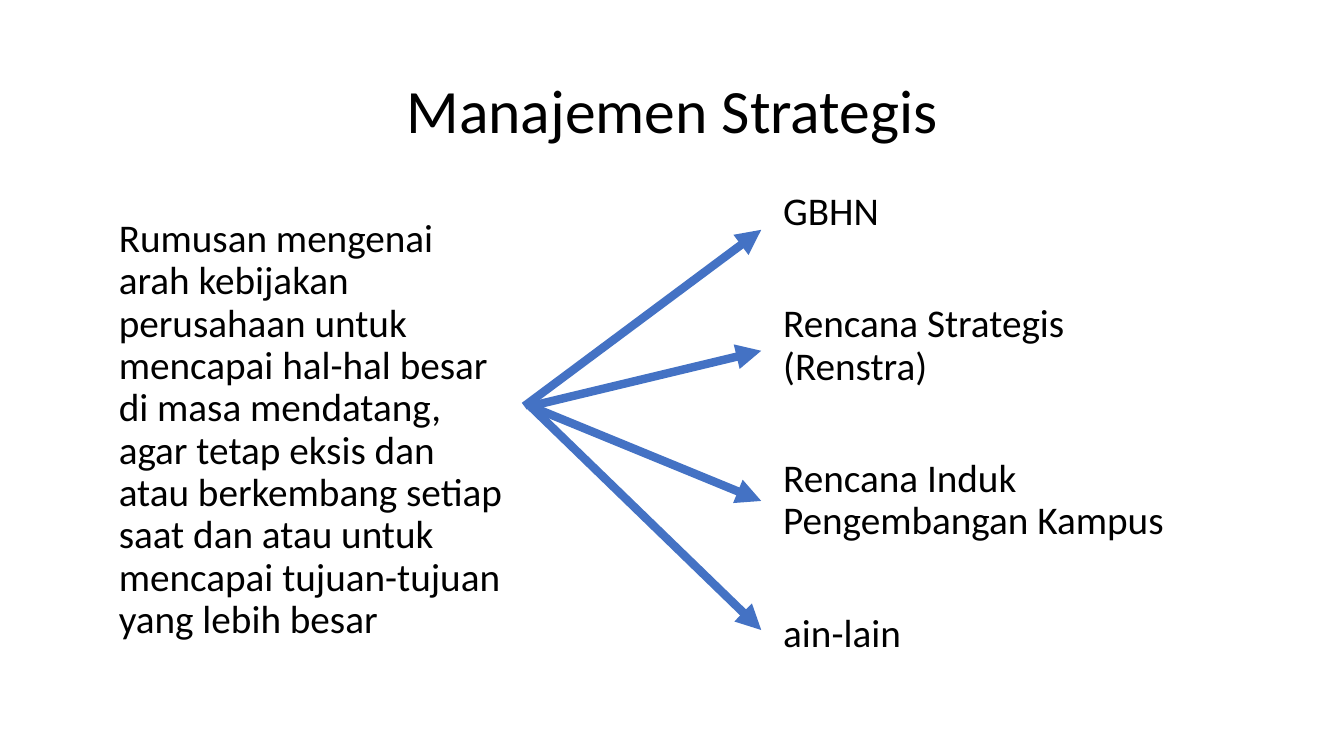
from pptx import Presentation
from pptx.dml.color import RGBColor
from pptx.enum.shapes import MSO_CONNECTOR
from pptx.enum.text import MSO_ANCHOR, PP_ALIGN
from pptx.oxml.ns import qn
from pptx.util import Inches, Pt
from lxml import etree

BLACK, BLUE = "000000", "4472C4"
DEFINITION = (
    "Rumusan mengenai arah kebijakan perusahaan untuk mencapai hal-hal besar "
    "di masa mendatang, agar tetap eksis dan atau berkembang setiap saat dan "
    "atau untuk mencapai tujuan-tujuan yang lebih besar"
)
PLANS = ["GBHN", "Rencana Strategis (Renstra)",
         "Rencana Induk Pengembangan Kampus", "ain-lain"]


def rgb(value):
    return RGBColor.from_string(value)


def style_paragraph(p, size, align):
    p.alignment = align
    p.line_spacing = 0.9
    p.font.name = "Calibri"
    p.font.size = Pt(size)
    p.font.color.rgb = rgb(BLACK)


def add_title(s, text, x, y, w, h):
    title = s.shapes.title
    title.left, title.top = Inches(x), Inches(y)
    title.width, title.height = Inches(w), Inches(h)
    tf = title.text_frame
    tf.text = text
    tf.vertical_anchor = MSO_ANCHOR.MIDDLE
    style_paragraph(tf.paragraphs[0], 44, PP_ALIGN.CENTER)


def add_text(s, lines, x, y, w, h, gap=0):
    box = s.shapes.add_textbox(Inches(x), Inches(y), Inches(w), Inches(h))
    tf = box.text_frame
    tf.word_wrap = True
    for i, line in enumerate(lines):
        p = tf.add_paragraph() if i else tf.paragraphs[0]
        p.text = line
        style_paragraph(p, 28, PP_ALIGN.LEFT)
        if i:
            p.space_before = Pt(gap)


def add_arrow(s, x1, y1, x2, y2):
    arrow = s.shapes.add_connector(
        MSO_CONNECTOR.STRAIGHT, Inches(x1), Inches(y1), Inches(x2), Inches(y2))
    arrow.line.color.rgb = rgb(BLUE)
    arrow.line.width = Pt(6)
    etree.SubElement(arrow.line._get_or_add_ln(), qn("a:tailEnd"), type="triangle")
    etree.SubElement(arrow._element.spPr, qn("a:effectLst"))


def add_arrow_fan(s, x, y, w, h):
    origin = y + 1.75
    for start, drop in [(x, 0), (x + 0.06, h), (x + 0.06, 2.69), (x + 0.06, 1.2)]:
        add_arrow(s, start, origin, x + w, y + drop)


def main():
    prs = Presentation()
    prs.slide_width, prs.slide_height = Inches(13.33), Inches(7.5)
    s = prs.slides.add_slide(prs.slide_layouts[5])
    add_title(s, "Manajemen Strategis", 0.92, 0.4, 11.5, 1.45)
    add_text(s, [DEFINITION], 1.08, 2.12, 4.06, 2.72)
    add_text(s, PLANS, 7.67, 1.85, 4.06, 2.72, gap=50)
    add_arrow_fan(s, 5.2, 2.28, 2.35, 3.97)
    prs.save("out.pptx")


if __name__ == "__main__":
    main()
